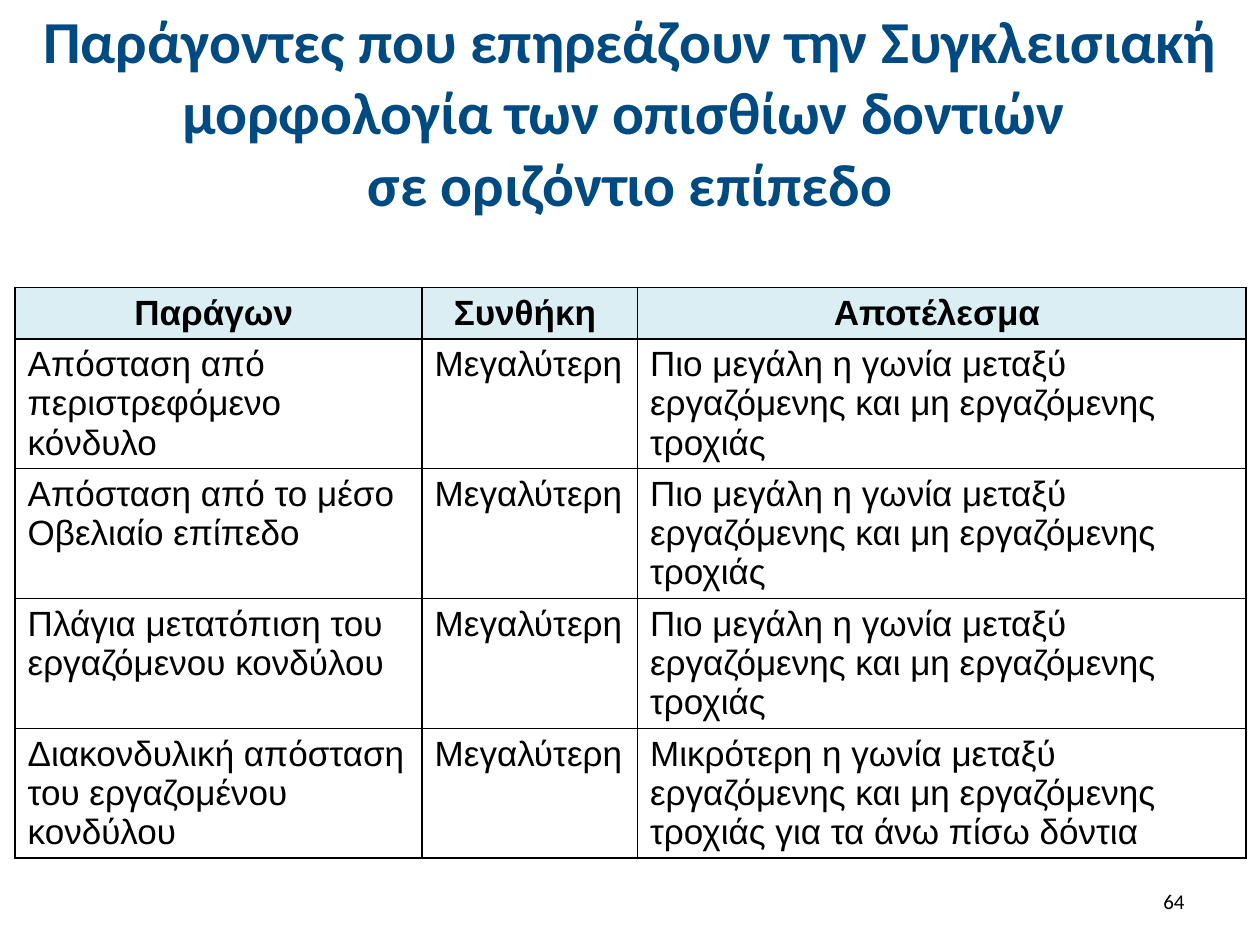
from dataclasses import dataclass
from typing import NamedTuple

from lxml import etree
from pptx import Presentation
from pptx.dml.color import RGBColor
from pptx.enum.text import MSO_ANCHOR, PP_ALIGN
from pptx.oxml.ns import qn
from pptx.util import Inches, Pt

LEFT, CENTER, RIGHT = PP_ALIGN.LEFT, PP_ALIGN.CENTER, PP_ALIGN.RIGHT
MIDDLE = MSO_ANCHOR.MIDDLE
TITLE_ONLY = 5


@dataclass(frozen=True)
class Theme:
    title_font: str = "Calibri"
    table_font: str = "Arial"
    title_color: str = "004A82"
    text_color: str = "000000"
    header_fill: str = "DBEEF4"
    title_size: int = 34
    table_size: int = 20
    number_size: int = 12
    border_width: int = 1


class Factor(NamedTuple):
    name: str
    condition: str
    result: str


THEME = Theme()
TITLE_LINES = (
    "Παράγοντες που επηρεάζουν την Συγκλεισιακή μορφολογία των οπισθίων δοντιών ",
    "σε οριζόντιο επίπεδο",
)
HEADER = Factor("Παράγων ", "Συνθήκη ", "Αποτέλεσμα ")
GREATER = "Μεγαλύτερη"
WIDER_ANGLE = "Πιο μεγάλη η γωνία μεταξύ εργαζόμενης και μη εργαζόμενης τροχιάς"
FACTORS = (
    Factor("Απόσταση από περιστρεφόμενο κόνδυλο", GREATER, WIDER_ANGLE),
    Factor("Απόσταση από το μέσο Οβελιαίο επίπεδο", GREATER, WIDER_ANGLE),
    Factor("Πλάγια μετατόπιση του εργαζόμενου κονδύλου", GREATER, WIDER_ANGLE),
    Factor("Διακονδυλική απόσταση του εργαζομένου κονδύλου", GREATER,
           "Μικρότερη η γωνία μεταξύ εργαζόμενης και μη εργαζόμενης "
           "τροχιάς για τα άνω πίσω δόντια"),
)
COLUMN_WIDTHS = (3.23, 1.71, 4.83)
ROW_HEIGHT = 0.41


def add_run(p, text: str, font: str, size: int, color: str, bold: bool = False) -> None:
    r = p.add_run()
    r.text = text
    r.font.name = font
    r.font.size = Pt(size)
    r.font.bold = bold
    r.font.color.rgb = RGBColor.from_string(color)


def add_title(s) -> None:
    sp = s.shapes.title
    sp.left, sp.top = Inches(0), Inches(0.13)
    sp.width, sp.height = Inches(10), Inches(1.5)
    tf = sp.text_frame
    tf.word_wrap = True
    tf.vertical_anchor = MIDDLE
    p = tf.paragraphs[0]
    p.alignment = CENTER
    for i, line in enumerate(TITLE_LINES):
        if i:
            p.add_line_break()
        add_run(p, line, THEME.title_font, THEME.title_size, THEME.title_color, True)


def set_borders(cell) -> None:
    """Draw all four sides; the lines must precede the fill in tcPr."""
    tc_pr = cell._tc.get_or_add_tcPr()
    for i, side in enumerate(("a:lnL", "a:lnR", "a:lnT", "a:lnB")):
        ln = etree.Element(qn(side), w=str(Pt(THEME.border_width)))
        fill = etree.SubElement(ln, qn("a:solidFill"))
        etree.SubElement(fill, qn("a:srgbClr"), val=THEME.text_color)
        tc_pr.insert(i, ln)


def fill_cell(cell, text: str, is_header: bool) -> None:
    if is_header:
        cell.fill.solid()
        cell.fill.fore_color.rgb = RGBColor.from_string(THEME.header_fill)
    else:
        cell.fill.background()
    set_borders(cell)
    p = cell.text_frame.paragraphs[0]
    p.alignment = CENTER if is_header else LEFT
    add_run(p, text, THEME.table_font, THEME.table_size, THEME.text_color, is_header)


def add_factor_table(s) -> None:
    rows = (HEADER, *FACTORS)
    table = s.shapes.add_table(
        len(rows), len(COLUMN_WIDTHS), Inches(0.12), Inches(2.28),
        Inches(sum(COLUMN_WIDTHS)), Inches(ROW_HEIGHT * len(rows))).table
    table.horz_banding = False
    for column, width in zip(table.columns, COLUMN_WIDTHS):
        column.width = Inches(width)
    for i, factor in enumerate(rows):
        for j, text in enumerate(factor):
            fill_cell(table.cell(i, j), text, is_header=i == 0)


def add_slide_number(s, number: str) -> None:
    sp = s.shapes.add_textbox(Inches(7.17), Inches(6.95), Inches(2.33), Inches(0.4))
    tf = sp.text_frame
    tf.word_wrap = True
    tf.vertical_anchor = MIDDLE
    p = tf.paragraphs[0]
    p.alignment = RIGHT
    add_run(p, number, THEME.title_font, THEME.number_size, THEME.text_color)


def main() -> None:
    prs = Presentation()
    prs.slide_width, prs.slide_height = Inches(10), Inches(7.5)
    s = prs.slides.add_slide(prs.slide_layouts[TITLE_ONLY])
    add_title(s)
    add_factor_table(s)
    add_slide_number(s, "64")
    prs.save("out.pptx")


if __name__ == "__main__":
    main()
